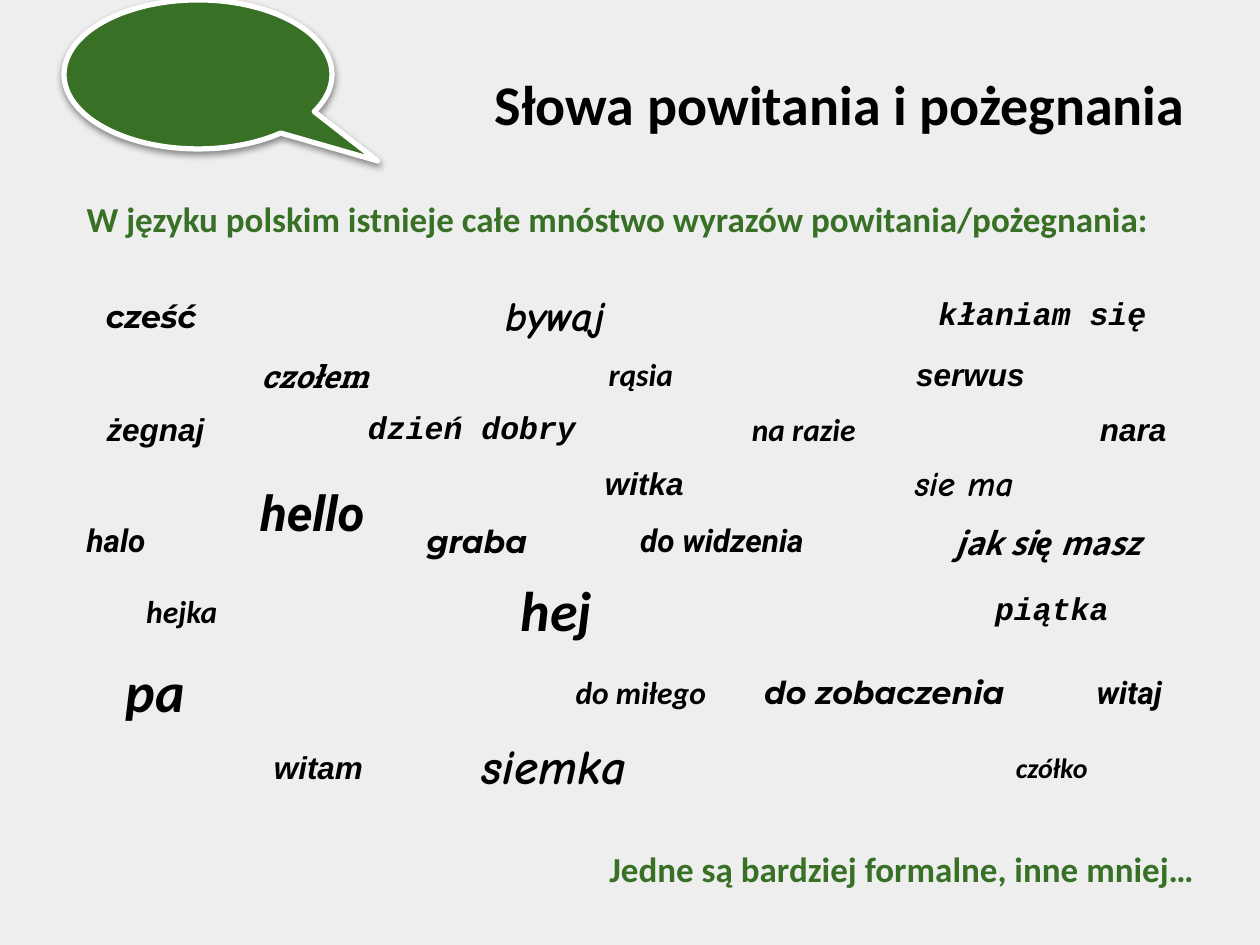
"""Build a slide of Polish greeting and farewell words."""
from lxml.etree import SubElement
from pptx import Presentation
from pptx.dml.color import RGBColor
from pptx.enum.shapes import MSO_SHAPE as Shape
from pptx.enum.text import MSO_ANCHOR as Anchor, PP_ALIGN as Align
from pptx.oxml import parse_xml
from pptx.oxml.ns import nsdecls, qn
from pptx.util import Pt

BLACK = RGBColor(0x00, 0x00, 0x00)
WHITE = RGBColor(0xFF, 0xFF, 0xFF)
GREEN = RGBColor(0x38, 0x70, 0x25)
GREY = RGBColor(0xEE, 0xEE, 0xEE)
PX = 914400 / 126
NO_GRID_STYLE = "{2D5ABB26-0587-4C30-8999-92F81FD0307C}"

COLUMN_WIDTHS = [163] * 7
ROW_HEIGHTS = [72, 30, 60, 56, 54, 54, 60, 80, 80, 70, 92]
INTRO = "W języku polskim istnieje całe mnóstwo wyrazów powitania/pożegnania:"
CLOSING = "Jedne są bardziej formalne, inne mniej… "
WORDS = [
    (2, 0, 1, "cześć ", "Montserrat", 18),
    (2, 2, 2, "bywaj ", "Comic Neue", 24),
    (2, 5, 2, "kłaniam się ", "Courier New", 18),
    (3, 1, 1, "czołem ", "Roboto Slab", 18),
    (3, 3, 1, "rąsia ", "Calibri", 18),
    (3, 5, 1, "serwus", "Arial", 18),
    (4, 0, 1, "żegnaj", "Arial", 18),
    (4, 1, 3, "dzień dobry ", "Courier New", 18),
    (4, 4, 1, "na razie ", "Calibri", 18),
    (4, 6, 1, "nara", "Arial", 18),
    (5, 1, 1, "hello ", "Roboto", 28),
    (5, 3, 1, "witka", "Arial", 18),
    (5, 5, 1, "sie ma ", "Comic Neue", 20),
    (6, 0, 1, "halo", "Roboto", 18),
    (6, 2, 1, "graba ", "Montserrat", 18),
    (6, 3, 2, "do widzenia ", "Roboto", 18),
    (6, 5, 2, "jak się masz ", "Noto Sans CJK JP", 18),
    (7, 0, 1, "hejka ", "Calibri", 18),
    (7, 1, 4, "hej ", "Calibri", 32),
    (7, 5, 2, "piątka", "Courier New", 18),
    (8, 0, 1, "pa", "Calibri", 32),
    (8, 3, 1, "do miłego ", "Calibri", 18),
    (8, 4, 2, "do zobaczenia ", "Montserrat", 18),
    (8, 6, 1, "witaj ", "Roboto", 18),
    (9, 1, 1, "witam", "Arial", 18),
    (9, 2, 2, "siemka ", "Comic Neue", 28),
    (9, 5, 2, "czółko", "Calibri", 16),
]
ROW_SPANS = {"hello ": 2}
ALIGNMENTS = {"halo": Align.LEFT, "hejka ": Align.RIGHT}


def px(length):
    return round(length * PX)


class GreetingSlide:
    def __init__(self):
        self.deck = Presentation()
        self.deck.slide_width, self.deck.slide_height = px(1260), px(945)
        self.slide = self.deck.slides.add_slide(self.deck.slide_layouts[5])
        background = self.slide.background.fill
        background.solid()
        background.fore_color.rgb = GREY

    def set_text(self, frame, text, face, size, color, align, italic=False):
        paragraph = frame.paragraphs[0]
        paragraph.text = text
        paragraph.alignment = align
        font = paragraph.font
        font.name, font.size = face, Pt(size)
        font.bold, font.italic = True, italic
        font.color.rgb = color

    def title(self, text, left, top, width, height):
        heading = self.slide.shapes.title
        heading.left, heading.top = px(left), px(top)
        heading.width, heading.height = px(width), px(height)
        heading.text_frame.vertical_anchor = Anchor.BOTTOM
        self.set_text(heading.text_frame, text, "Calibri", 32, BLACK, Align.RIGHT)

    def table(self, left, top, widths, heights):
        frame = self.slide.shapes.add_table(
            len(heights), len(widths), px(left), px(top), px(sum(widths)), px(sum(heights)))
        table = frame.table
        table.first_row = table.horz_banding = False
        table._tbl.tblPr.find(qn("a:tableStyleId")).text = NO_GRID_STYLE
        for column, width in zip(table.columns, widths):
            column.width = px(width)
        for row, height in zip(table.rows, heights):
            row.height = px(height)
        for cell in table.iter_cells():
            cell.fill.background()
            cell.vertical_anchor = Anchor.MIDDLE
            end = SubElement(cell.text_frame.paragraphs[0]._p, qn("a:endParaRPr"))
            end.set("sz", "800")
        return table

    def cell(self, table, row, column, span, text, face, size, color=BLACK,
             align=Align.CENTER, italic=True, row_span=1):
        cell = table.cell(row, column)
        if span > 1 or row_span > 1:
            cell.merge(table.cell(row + row_span - 1, column + span - 1))
        self.set_text(cell.text_frame, text, face, size, color, align, italic)
        return cell

    def callout(self, left, top, width, height, tip):
        bubble = self.slide.shapes.add_shape(
            Shape.OVAL_CALLOUT, px(left), px(top), px(width), px(height))
        bubble.adjustments[0], bubble.adjustments[1] = tip
        bubble.fill.solid()
        bubble.fill.fore_color.rgb = GREEN
        bubble.line.color.rgb = WHITE
        bubble.line.width = Pt(3)
        bubble._element.spPr.append(parse_xml(
            f'<a:effectLst {nsdecls("a")}><a:outerShdw blurRad="{Pt(4)}" dist="{Pt(2)}" '
            'dir="5400000" rotWithShape="0"><a:srgbClr val="000000">'
            '<a:alpha val="43000"/></a:srgbClr></a:outerShdw></a:effectLst>'))


def main():
    page = GreetingSlide()
    page.title("Słowa powitania i pożegnania", 64, 37, 1134, 106)
    greetings = page.table(74, 185, COLUMN_WIDTHS, ROW_HEIGHTS)
    columns, last_row = len(COLUMN_WIDTHS), len(ROW_HEIGHTS) - 1
    page.cell(greetings, 0, 0, columns, INTRO, "Calibri", 20, GREEN, Align.LEFT, False)
    for row, column, span, word, face, size in WORDS:
        page.cell(greetings, row, column, span, word, face, size,
                  align=ALIGNMENTS.get(word, Align.CENTER), row_span=ROW_SPANS.get(word, 1))
    closing = page.cell(greetings, last_row, 0, columns, CLOSING, "Calibri", 20,
                        GREEN, Align.RIGHT, False)
    closing.margin_top = px(45)
    page.callout(64, 0, 268, 149, (0.67, 0.58))
    page.deck.save("out.pptx")


if __name__ == "__main__":
    main()
